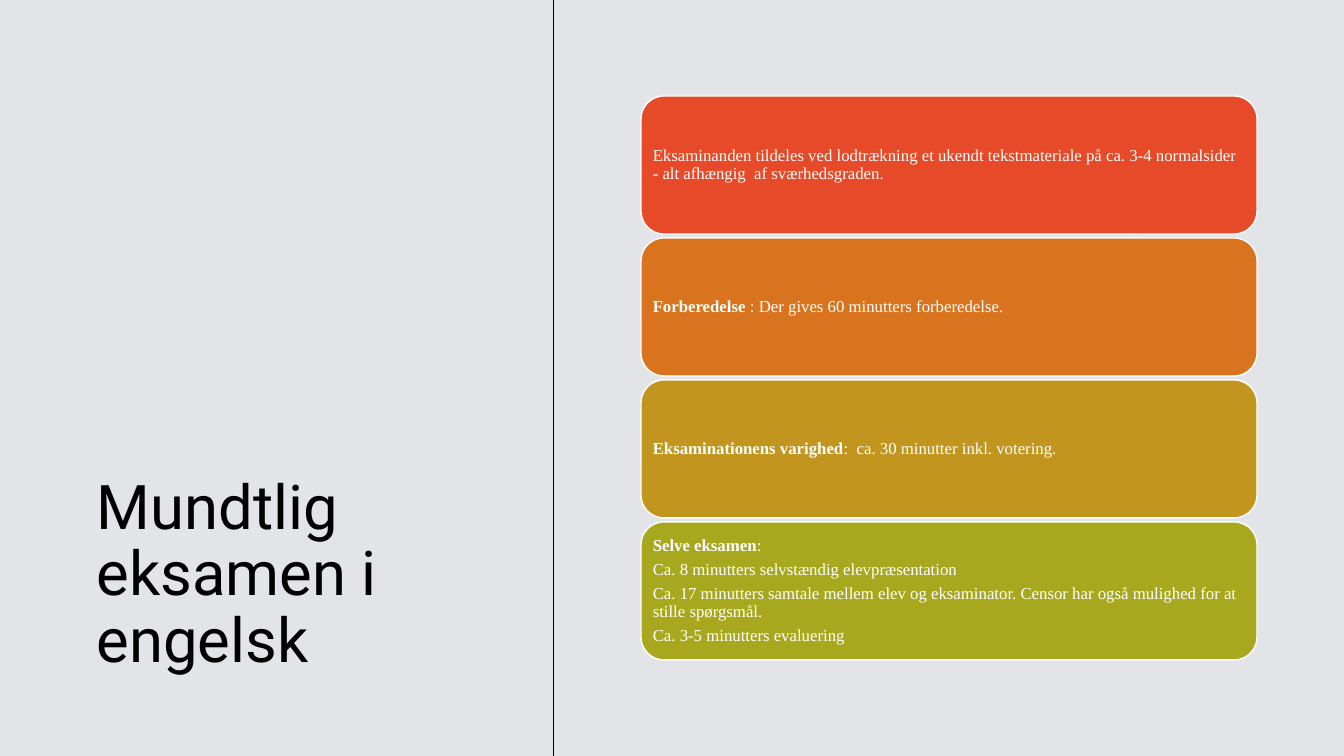
"""Build the slide about the oral English exam."""
from dataclasses import dataclass

from lxml.etree import SubElement
from pptx import Presentation
from pptx.dml.color import RGBColor
from pptx.enum.shapes import MSO_CONNECTOR, MSO_SHAPE
from pptx.enum.text import MSO_ANCHOR, PP_ALIGN
from pptx.oxml.ns import qn
from pptx.util import Pt


@dataclass(frozen=True)
class Theme:
    """Colours, fonts and type sizes of the slide."""
    background: str = "E2E4E8"
    ink: str = "000000"
    white: str = "FFFFFF"
    cards: tuple = ("E74A29", "DA731D", "C1951E", "A7A81E")
    title_font: str = "Roboto"
    body_font: str = "Times New Roman"
    title_size: int = 44
    body_size: int = 12
    line_spacing: float = 0.9


THEME = Theme()
SLIDE_WIDTH, SLIDE_HEIGHT = 960, 540
DIVIDER_LEFT = 395.3
CARD_LEFT, CARD_TOP, CARD_WIDTH, CARD_HEIGHT = 457.9, 68.6, 440, 98.6
CARD_PITCH = 101.4
CARD_INSET = 3.6

CARDS = [
    [("", "Eksaminanden tildeles ved lodtrækning et ukendt tekstmateriale på "
          "ca. 3-4 normalsider - alt afhængig  af sværhedsgraden.")],
    [("Forberedelse", " : Der gives 60 minutters forberedelse.")],
    [("Eksaminationens varighed", ":  ca. 30 minutter inkl. votering.")],
    [("Selve eksamen", ":"),
     ("", "Ca. 8 minutters selvstændig elevpræsentation"),
     ("", "Ca. 17 minutters samtale mellem elev og eksaminator. "
          "Censor har også mulighed for at stille spørgsmål."),
     ("", "Ca. 3-5 minutters evaluering")],
]


def color(value):
    """Turn a hex string into a colour."""
    return RGBColor.from_string(value)


def format_run(run, font, size, ink, bold=False):
    """Set the type of a run."""
    run.font.name = font
    run.font.size = Pt(size)
    run.font.color.rgb = color(ink)
    run.font.bold = bold


def add_title(slide, text):
    """Add the title at the bottom of the left half."""
    frame = slide.shapes.add_textbox(Pt(62), Pt(66), Pt(302.4), Pt(420)).text_frame
    frame.word_wrap = True
    frame.vertical_anchor = MSO_ANCHOR.BOTTOM
    frame.text = text
    paragraph = frame.paragraphs[0]
    paragraph.line_spacing = THEME.line_spacing
    format_run(paragraph.runs[0], THEME.title_font, THEME.title_size, THEME.ink)


def add_divider(slide):
    """Add the thin line between the two halves."""
    line = slide.shapes.add_connector(
        MSO_CONNECTOR.STRAIGHT,
        Pt(DIVIDER_LEFT), Pt(SLIDE_HEIGHT), Pt(DIVIDER_LEFT), Pt(0))
    line.line.color.rgb = color(THEME.ink)
    line.line.width = Pt(0.5)
    SubElement(line._element.spPr, qn("a:effectLst"))


def write_paragraph(paragraph, lead, rest):
    """Write a paragraph with an optional bold lead."""
    paragraph.alignment = PP_ALIGN.LEFT
    paragraph.line_spacing = THEME.line_spacing
    paragraph.space_after = Pt(4.2)
    for text, bold in ((lead, True), (rest, False)):
        if text:
            run = paragraph.add_run()
            run.text = text
            format_run(run, THEME.body_font, THEME.body_size, THEME.white, bold)


def add_card(slide, top, fill, lines):
    """Add a rounded card with its text."""
    card = slide.shapes.add_shape(
        MSO_SHAPE.ROUNDED_RECTANGLE,
        Pt(CARD_LEFT), Pt(top), Pt(CARD_WIDTH), Pt(CARD_HEIGHT))
    card.shadow.inherit = False
    card.fill.solid()
    card.fill.fore_color.rgb = color(fill)
    card.line.color.rgb = color(THEME.white)
    card.line.width = Pt(1)
    frame = card.text_frame
    frame.word_wrap = True
    frame.vertical_anchor = MSO_ANCHOR.MIDDLE
    frame.margin_left = frame.margin_right = Pt(CARD_INSET)
    frame.margin_top = frame.margin_bottom = Pt(CARD_INSET)
    for index, (lead, rest) in enumerate(lines):
        paragraph = frame.add_paragraph() if index else frame.paragraphs[0]
        write_paragraph(paragraph, lead, rest)


def main():
    """Build and save the presentation."""
    presentation = Presentation()
    presentation.slide_width = Pt(SLIDE_WIDTH)
    presentation.slide_height = Pt(SLIDE_HEIGHT)
    slide = presentation.slides.add_slide(presentation.slide_layouts[6])
    slide.background.fill.solid()
    slide.background.fill.fore_color.rgb = color(THEME.background)
    add_title(slide, "Mundtlig eksamen i engelsk")
    add_divider(slide)
    for index, (fill, lines) in enumerate(zip(THEME.cards, CARDS)):
        add_card(slide, CARD_TOP + index * CARD_PITCH, fill, lines)
    presentation.save("out.pptx")


if __name__ == "__main__":
    main()
